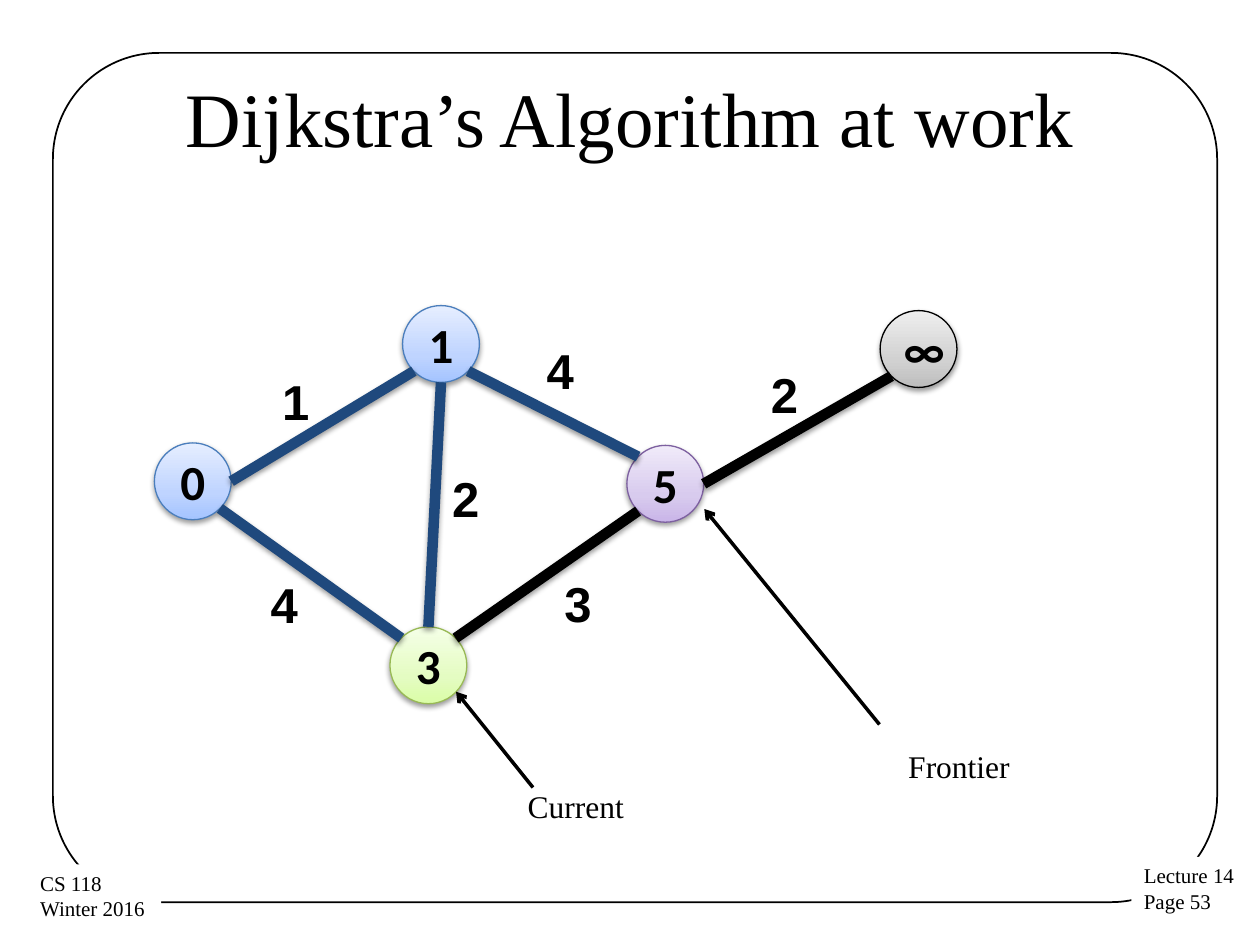
import copy
import math

import lxml.etree
import pptx
import pptx.dml.color
import pptx.enum.shapes
import pptx.enum.text
import pptx.oxml.ns
import pptx.util

Inches = pptx.util.Inches
Pt = pptx.util.Pt
ALIGN = pptx.enum.text.PP_ALIGN
ANCHOR = pptx.enum.text.MSO_ANCHOR
SHAPES = pptx.enum.shapes.MSO_SHAPE

BLACK, WHITE, NAVY = "000000", "FFFFFF", "1F497D"
SERIF = {"name": "Times New Roman", "size": Pt(18), "bold": False}
FOOTER = {**SERIF, "size": Pt(12)}
TITLE = {**SERIF, "size": Pt(44)}
WEIGHT = {"name": "Arial", "size": Pt(28), "bold": True}
DISTANCE = {"name": "Calibri", "size": Pt(28), "bold": True}

BLUE = ("4B7EBC", ("A4C4FF", "BFD4FF", "E6EEFF"))
PURPLE = ("7D60A0", ("C9B5E8", "D8CBEE", "F0EAF9"))
GRAY = (BLACK, ("BDBDBD", "D1D1D1", "EEEEEE"))
GREEN = ("98B955", ("DAFDA7", "E4FCC2", "F5FFE7"))
STOP_POSITIONS = (0, 0.35, 1)

NODE_SIZE = 0.61
NODES = {
    "start": ("0", 1.53, 3.82, BLUE),
    "top": ("1", 3.5, 2.73, BLUE),
    "frontier": ("5", 5.28, 3.84, PURPLE),
    "far": ("∞", 7.29, 2.77, GRAY),
    "current": ("3", 3.4, 5.28, GREEN),
}
EDGES = [
    ("frontier", 0, "far", 135, BLACK),
    ("top", 90, "current", 270, NAVY),
    ("start", 0, "top", 135, NAVY),
    ("top", 45, "frontier", 225, NAVY),
    ("current", 315, "frontier", 135, BLACK),
    ("start", 45, "current", 225, NAVY),
]
WEIGHTS = [
    ("1", 2.14, 2.9), ("4", 2.05, 4.51), ("2", 3.49, 3.67),
    ("4", 4.24, 2.65), ("3", 4.38, 4.5), ("2", 6.02, 2.84),
]


def color(value):
    """Return the colour for a hex string."""
    return pptx.dml.color.RGBColor.from_string(value)


def set_format(target, values):
    """Set each attribute of the target from a dict."""
    for name, value in values.items():
        setattr(target, name, value)


def add_child(parent, tag, **attributes):
    """Append an XML element with attributes to the parent."""
    child = lxml.etree.SubElement(parent, pptx.oxml.ns.qn(tag))
    for name, value in attributes.items():
        child.set(name, value)
    return child


def set_effects(shape, shadowed):
    """Give a shape or connector a soft drop shadow or none."""
    effects = add_child(shape._element.spPr, "a:effectLst")
    if shadowed:
        shadow = add_child(effects, "a:outerShdw", blurRad=str(Pt(3.1)),
                           dist=str(Pt(1.6)), dir="5400000", rotWithShape="0")
        shade = add_child(shadow, "a:srgbClr", val=BLACK)
        add_child(shade, "a:alpha", val="38000")


def write_text(shape, lines, font, alignment=ALIGN.LEFT):
    """Write one paragraph for each line."""
    frame = shape.text_frame
    for index, line in enumerate(lines):
        paragraph = frame.add_paragraph() if index else frame.paragraphs[0]
        paragraph.alignment = alignment
        paragraph.text = line
        set_format(paragraph.font, font)
        paragraph.font.color.rgb = color(BLACK)


def add_label(slide, box, lines, font, fill=None, wrap=False):
    """Add a text box that grows with its text."""
    label = slide.shapes.add_textbox(*map(Inches, box))
    set_format(label.text_frame, {
        "word_wrap": wrap,
        "auto_size": pptx.enum.text.MSO_AUTO_SIZE.SHAPE_TO_FIT_TEXT,
    })
    if fill:
        label.fill.solid()
        label.fill.fore_color.rgb = color(fill)
    write_text(label, lines, font)


def add_title(slide, text):
    """Add the centred slide title."""
    title = slide.shapes.add_textbox(*map(Inches, (0.5, 0.3, 9, 1.25)))
    set_format(title.text_frame,
               {"word_wrap": True, "vertical_anchor": ANCHOR.MIDDLE})
    write_text(title, [text], TITLE, ALIGN.CENTER)


def add_frame(slide):
    """Add the rounded outline around the slide."""
    frame = slide.shapes.add_shape(SHAPES.ROUNDED_RECTANGLE,
                                   *map(Inches, (0.42, 0.42, 9.24, 6.74)))
    frame.adjustments[0] = 0.125
    frame.fill.background()
    frame.line.color.rgb = color(BLACK)
    frame.line.width = Pt(1)
    set_effects(frame, False)


def fill_gradient(shape, values):
    """Fill a shape with a gradient that rises from its bottom."""
    shape.fill.gradient()
    shape.fill.gradient_angle = 90
    stops = shape._element.spPr.find(".//" + pptx.oxml.ns.qn("a:gsLst"))
    while len(stops) < len(values):
        stops.append(copy.deepcopy(stops[0]))
    for stop, position, value in zip(shape.fill.gradient_stops, STOP_POSITIONS, values):
        stop.position = position
        stop.color.rgb = color(value)


def add_node(slide, distance, x, y, scheme):
    """Add a graph node centred on a point."""
    outline, gradient = scheme
    box = (x - NODE_SIZE / 2, y - NODE_SIZE / 2, NODE_SIZE, NODE_SIZE)
    node = slide.shapes.add_shape(SHAPES.OVAL, *map(Inches, box))
    fill_gradient(node, gradient)
    node.line.color.rgb = color(outline)
    node.line.width = Pt(0.75)
    set_effects(node, True)
    node.text_frame.vertical_anchor = ANCHOR.MIDDLE
    write_text(node, [distance], DISTANCE, ALIGN.CENTER)


def rim_point(name, degrees):
    """Return the point on a node's rim, clockwise from its right."""
    x, y = NODES[name][1:3]
    angle = math.radians(degrees)
    return (x + NODE_SIZE / 2 * math.cos(angle),
            y + NODE_SIZE / 2 * math.sin(angle))


def add_line(slide, start, end, value, width, arrow=False):
    """Add a shadowed edge, or a plain pointer with an arrowhead."""
    line = slide.shapes.add_connector(pptx.enum.shapes.MSO_CONNECTOR.STRAIGHT,
                                      *map(Inches, (*start, *end)))
    line.line.color.rgb = color(value)
    line.line.width = Pt(width)
    if arrow:
        add_child(line._element.spPr.find(pptx.oxml.ns.qn("a:ln")),
                  "a:tailEnd", type="arrow")
    set_effects(line, not arrow)


def main():
    """Build and save the slide."""
    presentation = pptx.Presentation()
    set_format(presentation,
               {"slide_width": Inches(10), "slide_height": Inches(7.5)})
    slide = presentation.slides.add_slide(presentation.slide_layouts[6])
    add_frame(slide)
    add_label(slide, (8.98, 6.8, 0.93, 0.51), ["Lecture 14", "Page 53"], FOOTER, WHITE)
    add_label(slide, (0.22, 6.86, 1.06, 0.51), ["CS 118", "Winter 2016"], FOOTER, WHITE)
    add_title(slide, "Dijkstra’s Algorithm at work")
    for node in NODES.values():
        add_node(slide, *node)
    for first, leaving, second, arriving, value in EDGES:
        add_line(slide, rim_point(first, leaving), rim_point(second, arriving), value, 6)
    for text, left, top in WEIGHTS:
        add_label(slide, (left, top, 0.42, 0.57), [text], WEIGHT)
    add_line(slide, (4.23, 6.25), (3.62, 5.49), BLACK, 2, arrow=True)
    add_label(slide, (4.09, 6.2, 0.97, 0.4), ["Current"], SERIF)
    add_line(slide, (6.98, 5.75), (5.59, 4.04), BLACK, 2, arrow=True)
    add_label(slide, (7.11, 5.88, 1.02, 0.4), ["Frontier"], SERIF, wrap=True)
    presentation.save("out.pptx")


if __name__ == "__main__":
    main()
